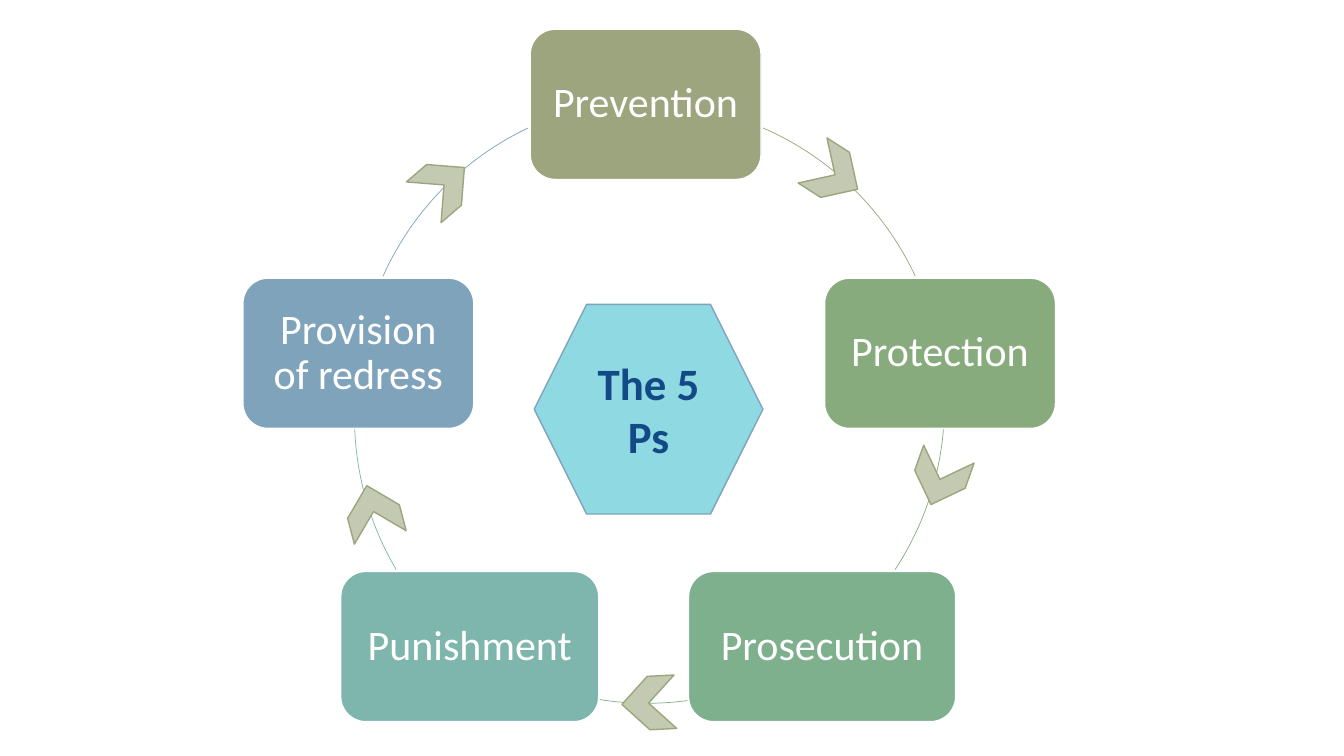
from math import atan2, degrees, hypot, sqrt

from pptx import Presentation
from pptx.dml.color import RGBColor
from pptx.enum.shapes import MSO_SHAPE
from pptx.enum.text import MSO_ANCHOR, PP_ALIGN
from pptx.util import Pt

WHITE, OLIVE, BLUE = "FFFFFF", "9CA57D", "7FA3BA"
BOX_HEIGHT = 107.3
CHEVRON_SIZE = 38.2
RADIUS = 213.8

# Label, colour, left, top, width of the box; start and end of the arc after it
STEPS = [
    ("Prevention", OLIVE, 378.7, 20.9, 164.9, (545, 91.4), (653.8, 197.3)),
    ("Protection", "88AB7D", 589, 198.7, 164.9, (673.9, 306.7), (639.4, 406.8)),
    ("Prosecution", "7EB08D", 491.8, 408.2, 190.8, (491, 500.4), (428.4, 499.7)),
    ("Punishment", "7EB5AD", 243.4, 408.2, 184.3, (283, 406.8), (253.4, 306.7)),
    ("Provision of redress", BLUE, 173.5, 198.7, 164.9, (273.6, 197.3), (377.3, 91.4)),
]
# Left, top, rotation
CHEVRONS = [
    (652.3, 323.3, 109.6),
    (577.4, 105.8, 32.6),
    (247.7, 346.3, 255.4),
    (444.2, 483.1, 177.1),
    (298.1, 113, 319.5),
]


def color(value):
    return RGBColor.from_string(value)


def write(shape, text, size=30, fill=WHITE, bold=False, spacing=1.0, font="Calibri"):
    frame = shape.text_frame
    frame.word_wrap = True
    frame.vertical_anchor = MSO_ANCHOR.MIDDLE
    para = frame.paragraphs[0]
    para.alignment = PP_ALIGN.CENTER
    para.line_spacing = spacing
    span = para.add_run()
    span.text = text
    span.font.name = font
    span.font.size = Pt(size)
    span.font.bold = bold
    span.font.color.rgb = color(fill)


class CycleSlide:
    """Holds the page and the line style shared by the cycle's parts."""

    def __init__(self, page, line_width=1, arc_width=0.5, inset=8.6):
        self.page = page
        self.line_width = line_width
        self.arc_width = arc_width
        self.inset = inset

    def shape(self, kind, left, top, width, height, line, fill=None, line_width=None):
        shape = self.page.shapes.add_shape(
            kind, Pt(left), Pt(top), Pt(width), Pt(height))
        shape.shadow.inherit = False
        if fill:
            shape.fill.solid()
            shape.fill.fore_color.rgb = color(fill)
        else:
            shape.fill.background()
        shape.line.color.rgb = color(line)
        shape.line.width = Pt(line_width or self.line_width)
        return shape

    def step(self, label, fill, left, top, width):
        box = self.shape(MSO_SHAPE.ROUNDED_RECTANGLE, left, top, width, BOX_HEIGHT,
                         WHITE, fill)
        frame = box.text_frame
        frame.margin_left = frame.margin_right = Pt(self.inset)
        frame.margin_top = frame.margin_bottom = Pt(self.inset)
        write(box, label, spacing=0.9)

    def arc(self, start, end, line):
        """Draw a clockwise arc of the common radius between two points."""
        (x1, y1), (x2, y2) = start, end
        chord = hypot(x2 - x1, y2 - y1)
        reach = sqrt(RADIUS ** 2 - chord ** 2 / 4) / chord
        center_x = (x1 + x2) / 2 - (y2 - y1) * reach
        center_y = (y1 + y2) / 2 + (x2 - x1) * reach
        arc = self.shape(MSO_SHAPE.ARC, center_x - RADIUS, center_y - RADIUS,
                         2 * RADIUS, 2 * RADIUS, line, line_width=self.arc_width)
        for index, (x, y) in enumerate((start, end)):
            angle = degrees(atan2(y - center_y, x - center_x)) % 360
            # Angles are stored in 1/60000 degree, adjustments in 1/100000
            arc.adjustments[index] = angle * 0.6

    def hexagon(self, text, left, top, width, height):
        hexagon = self.shape(MSO_SHAPE.HEXAGON, left, top, width, height, BLUE, "8FD9E3")
        write(hexagon, text, size=32, fill="134985", bold=True)

    def chevron(self, left, top, rotation):
        chevron = self.shape(MSO_SHAPE.CHEVRON, left, top, CHEVRON_SIZE, CHEVRON_SIZE,
                             OLIVE, "C4C9B1")
        chevron.rotation = rotation


def main():
    deck = Presentation()
    deck.slide_width, deck.slide_height = Pt(960), Pt(540)
    cycle = CycleSlide(deck.slides.add_slide(deck.slide_layouts[6]))

    # Boxes and the arcs that join them
    for label, fill, left, top, width, start, end in STEPS:
        cycle.step(label, fill, left, top, width)
        cycle.arc(start, end, fill)

    # Centre
    cycle.hexagon("The 5 Ps", 381.6, 217.4, 163.4, 149.8)

    # Direction marks
    for left, top, rotation in CHEVRONS:
        cycle.chevron(left, top, rotation)

    deck.save("out.pptx")


if __name__ == "__main__":
    main()
